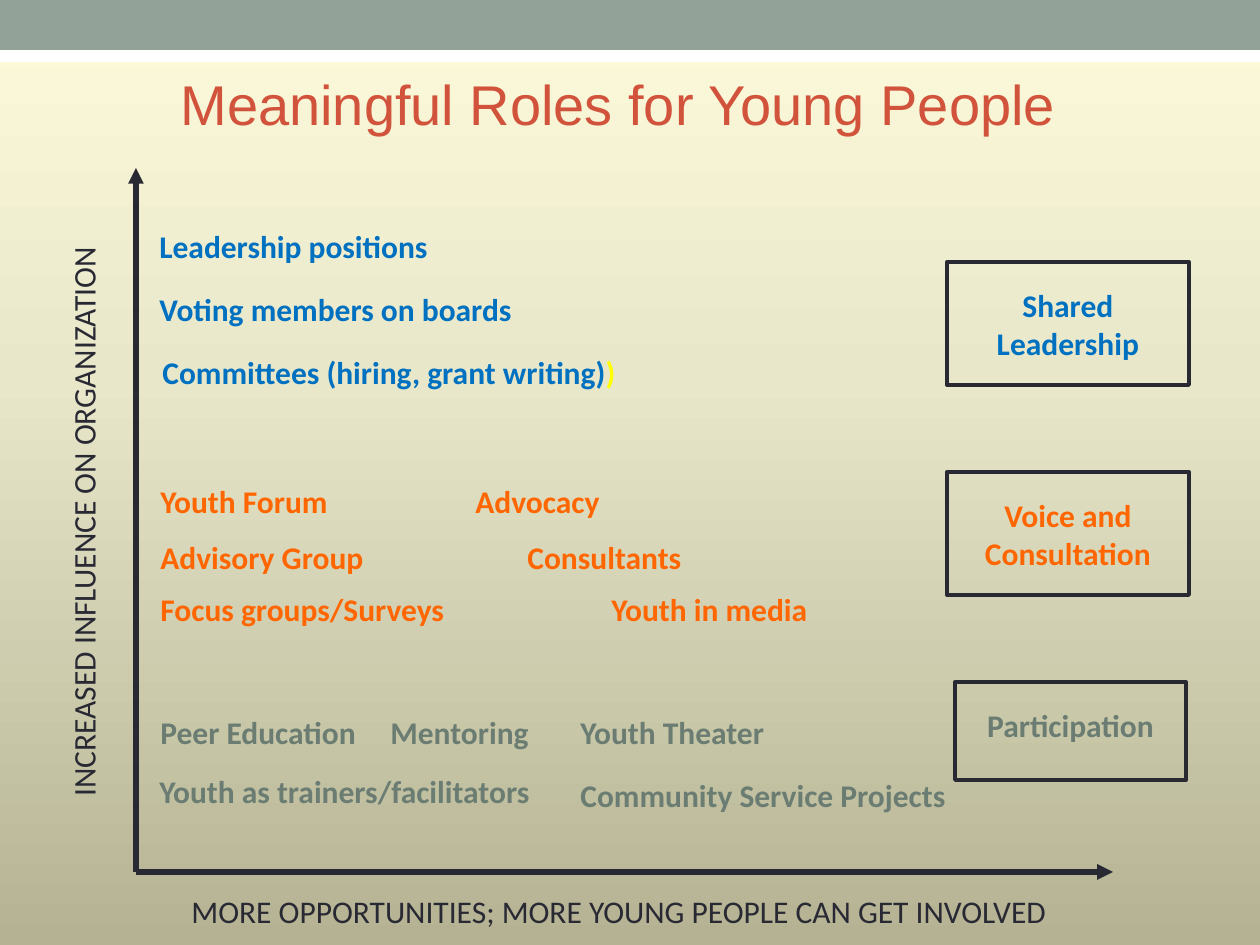
from dataclasses import dataclass

from lxml.etree import SubElement
from pptx import Presentation
from pptx.dml.color import RGBColor
from pptx.enum.shapes import MSO_CONNECTOR, MSO_SHAPE
from pptx.enum.text import MSO_ANCHOR, PP_ALIGN
from pptx.oxml.ns import qn
from pptx.util import Pt

EMU_PER_PX = 914400 / 126

WHITE = RGBColor(0xFF, 0xFF, 0xFF)
SAGE = RGBColor(0x93, 0xA2, 0x99)
RED = RGBColor(0xD2, 0x53, 0x3C)
BLUE = RGBColor(0x00, 0x70, 0xC0)
YELLOW = RGBColor(0xFF, 0xFF, 0x00)
ORANGE = RGBColor(0xFF, 0x66, 0x00)
GREEN = RGBColor(0x6B, 0x7D, 0x72)
INK = RGBColor(0x29, 0x29, 0x34)
BACKGROUND_STOPS = {0: "FDFBDA", 40: "E8E7CA", 100: "B4B293"}

ROLE_HEIGHT = 50
ORIGIN = (136, 872)


@dataclass(frozen=True)
class Role:
    text: str
    left: int
    top: int
    width: int


@dataclass(frozen=True)
class Level:
    name: str
    color: RGBColor
    box: tuple[int, int, int, int]
    roles: tuple[Role, ...]


LEVELS = (
    Level("Shared Leadership", BLUE, (947, 262, 242, 123), (
        Role("Leadership positions", 147, 221, 354),
        Role("Voting members on boards", 147, 284, 437),
        Role("Committees (hiring, grant writing)", 150, 347, 513),
    )),
    Level("Voice and Consultation", ORANGE, (947, 472, 242, 123), (
        Role("Youth Forum", 148, 476, 194),
        Role("Advocacy", 463, 476, 150),
        Role("Advisory Group", 148, 532, 231),
        Role("Consultants", 515, 532, 180),
        Role("Focus groups/Surveys", 148, 584, 311),
        Role("Youth in media", 599, 584, 223),
    )),
    Level("Participation", GREEN, (955, 682, 231, 98), (
        Role("Peer Education", 148, 707, 223),
        Role("Mentoring", 378, 707, 165),
        Role("Youth Theater", 568, 707, 210),
        Role("Youth as trainers/facilitators", 147, 766, 398),
        Role("Community Service Projects", 568, 770, 393),
    )),
)


def px(length: int) -> int:
    return round(length * EMU_PER_PX)


def set_values(target, values: dict) -> None:
    for name, value in values.items():
        setattr(target, name, value)


def add_run(paragraph, text: str, color: RGBColor, bold=False,
            size=18, font="Calibri") -> None:
    run = paragraph.add_run()
    run.text = text
    set_values(run.font, {"name": font, "size": Pt(size), "bold": bold})
    run.font.color.rgb = color


def add_label(slide, text: str, box: tuple, color: RGBColor, wrap=False, **style):
    label = slide.shapes.add_textbox(*map(px, box))
    label.text_frame.word_wrap = wrap
    add_run(label.text_frame.paragraphs[0], text, color, **style)
    return label


def add_rectangle(slide, box: tuple):
    rectangle = slide.shapes.add_shape(MSO_SHAPE.RECTANGLE, *map(px, box))
    rectangle.shadow.inherit = False
    return rectangle


def add_band(slide, box: tuple, color: RGBColor) -> None:
    band = add_rectangle(slide, box)
    band.fill.solid()
    band.fill.fore_color.rgb = color
    band.line.fill.background()


def add_axis(slide, end: tuple[int, int]) -> None:
    axis = slide.shapes.add_connector(MSO_CONNECTOR.STRAIGHT, *map(px, ORIGIN + end))
    axis.line.color.rgb = INK
    axis.line.width = Pt(3)
    SubElement(axis.line._get_or_add_ln(), qn("a:tailEnd"), type="triangle")
    SubElement(axis._element.spPr, qn("a:effectLst"))


def add_level_box(slide, level: Level) -> None:
    box = add_rectangle(slide, level.box)
    box.fill.background()
    box.line.color.rgb = INK
    box.line.width = Pt(2.25)
    set_values(box.text_frame, {
        "word_wrap": True,
        "vertical_anchor": MSO_ANCHOR.TOP,
        "margin_top": px(24),
    })
    name = box.text_frame.paragraphs[0]
    name.alignment = PP_ALIGN.CENTER
    add_run(name, level.name, level.color, bold=True)


def add_level(slide, level: Level) -> None:
    for role in level.roles:
        label = add_label(slide, role.text,
                          (role.left, role.top, role.width, ROLE_HEIGHT),
                          level.color, bold=True)
        if role.text.startswith("Committees"):
            add_run(label.text_frame.paragraphs[0], ")", YELLOW, bold=True)
    add_level_box(slide, level)


def set_background(slide) -> None:
    fill = slide.background.fill
    fill.gradient()
    fill.gradient_angle = 270
    stops = slide.element.find(".//" + qn("a:gsLst"))
    stops.clear()
    for percent, color in BACKGROUND_STOPS.items():
        stop = SubElement(stops, qn("a:gs"), pos=str(percent * 1000))
        SubElement(stop, qn("a:srgbClr"), val=color)


def main() -> None:
    presentation = Presentation()
    presentation.slide_width = px(1260)
    presentation.slide_height = px(945)
    slide = presentation.slides.add_slide(presentation.slide_layouts[6])

    set_background(slide)
    add_band(slide, (0, 30, 1260, 32), WHITE)
    add_band(slide, (0, 0, 1260, 50), SAGE)
    add_label(slide, "Meaningful Roles for Young People", (168, 63, 1033, 81),
              RED, wrap=True, size=32, font="Arial")

    for level in LEVELS:
        add_level(slide, level)

    for end in ((136, 168), (1113, 872)):
        add_axis(slide, end)
    influence = add_label(slide, "INCREASED INFLUENCE ON ORGANIZATION",
                          (58, 242, 63, 567), INK)
    influence.text_frame._txBody.bodyPr.set("vert", "vert270")
    add_label(slide, "MORE OPPORTUNITIES; MORE YOUNG PEOPLE CAN GET INVOLVED",
              (179, 886, 888, ROLE_HEIGHT), INK)

    presentation.save("out.pptx")


if __name__ == "__main__":
    main()
